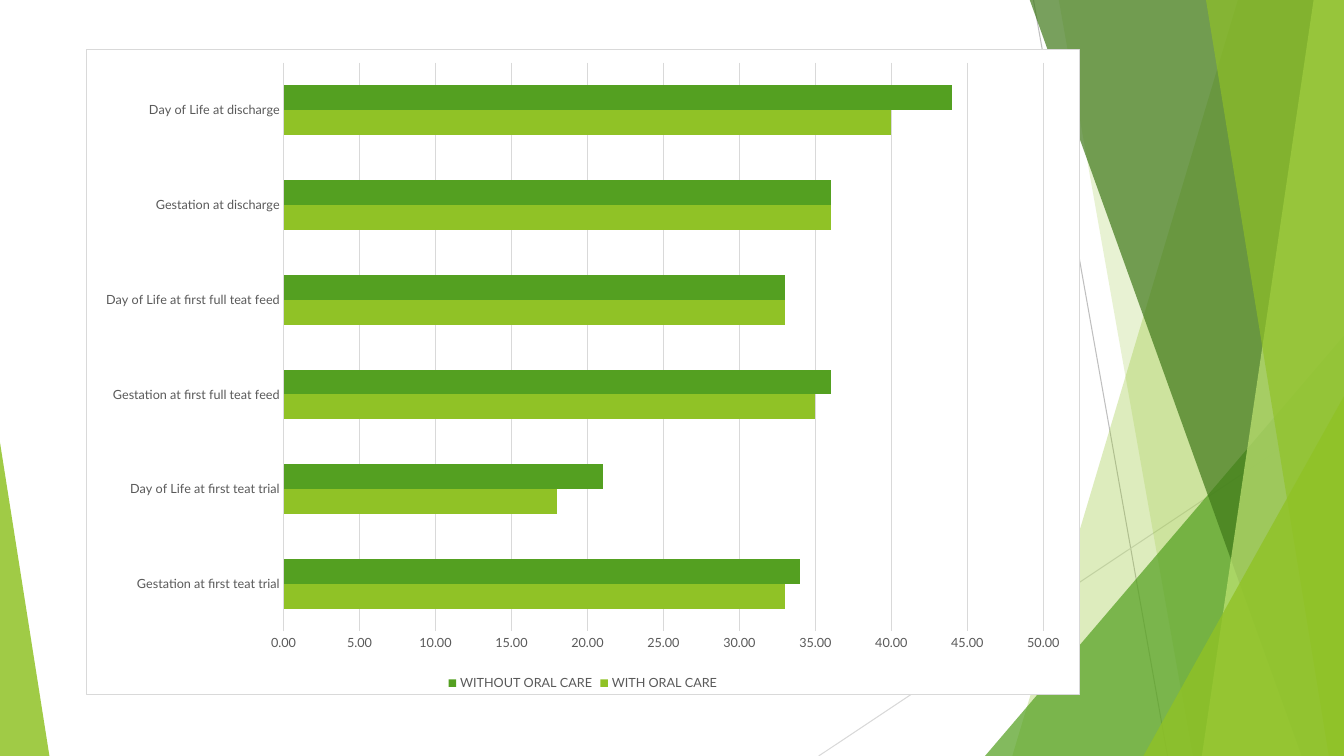
from dataclasses import dataclass

from lxml import etree
from pptx import Presentation
from pptx.chart.data import CategoryChartData
from pptx.dml.color import RGBColor
from pptx.enum.chart import XL_CHART_TYPE, XL_LEGEND_POSITION, XL_TICK_LABEL_POSITION, XL_TICK_MARK
from pptx.enum.shapes import MSO_CONNECTOR, MSO_SHAPE
from pptx.oxml import parse_xml
from pptx.oxml.ns import nsdecls, qn
from pptx.util import Pt

BAR = XL_CHART_TYPE.BAR_CLUSTERED
BOTTOM = XL_LEGEND_POSITION.BOTTOM
NEXT_TO_AXIS = XL_TICK_LABEL_POSITION.NEXT_TO_AXIS
NO_TICK = XL_TICK_MARK.NONE
STRAIGHT = MSO_CONNECTOR.STRAIGHT
TRIANGLE = MSO_SHAPE.ISOSCELES_TRIANGLE

PX = 9144
W, H = 1333, 750


@dataclass(frozen=True)
class Theme:
    lime: str = "90C226"
    green: str = "54A021"
    forest: str = "3F7819"
    pale: str = "C0E474"
    white: str = "FFFFFF"
    text: str = "595959"
    rule: str = "D9D9D9"
    rule_dark: str = "BFBFBF"
    font: str = "Lato"
    label_size: float = 9
    base_size: float = 10
    hairline: float = 0.75


FACETS = [
    ("band", (1228, 1004), "lime", 30),
    ("band", (1050, 1183), "lime", 20),
    ("triangle", (977, 333, 356, 417, 1), "green", 72),
    ("band", (1021, 1291), "forest", 70),
    ("band", (1303, 1192), "pale", 70),
    ("band", (1196, 1318), "lime", 65),
    ("triangle", (1134, 393, 199, 357, 1), "lime", 80),
    ("triangle", (0, 439, 49, 311, 0), "lime", 85),
]

CATEGORIES = [
    "Gestation at first teat trial",
    "Day of Life at first teat trial",
    "Gestation at first full teat feed",
    "Day of Life at first full teat feed",
    "Gestation at discharge",
    "Day of Life at discharge",
]

SERIES = [
    ("WITH ORAL CARE", "lime", [33, 18, 35, 33, 36, 40]),
    ("WITHOUT ORAL CARE", "green", [34, 21, 36, 33, 36, 44]),
]


class Deck:
    """Draws themed elements on the current slide."""

    def __init__(self, theme):
        self.theme = theme
        self.prs = Presentation()
        self.prs.slide_width, self.prs.slide_height = W * PX, H * PX
        self.s = self.prs.slides.add_slide(self.prs.slide_layouts[6])

    def color(self, name):
        return RGBColor.from_string(getattr(self.theme, name))

    def apply(self, target, values):
        for key, value in values.items():
            setattr(target, key, value)

    def stroke(self, line, color):
        line.color.rgb = self.color(color)
        line.width = Pt(self.theme.hairline)

    def type(self, font, size):
        self.apply(font, {"name": self.theme.font, "size": Pt(size)})
        font.color.rgb = self.color("text")

    def line(self, x1, y1, x2, y2, color):
        c = self.s.shapes.add_connector(STRAIGHT, x1 * PX, y1 * PX, x2 * PX, y2 * PX)
        self.stroke(c.line, color)
        etree.SubElement(c._element.spPr, qn("a:effectLst"))

    def paint(self, sp, color, opacity):
        sp.shadow.inherit = False
        sp.line.fill.background()
        sp.fill.solid()
        sp.fill.fore_color.rgb = self.color(color)
        clr = sp._element.spPr.find(".//" + qn("a:srgbClr"))
        etree.SubElement(clr, qn("a:alpha")).set("val", str(opacity * 1000))

    def band(self, top_x, bottom_x):
        fb = self.s.shapes.build_freeform(top_x, -1, scale=PX)
        fb.add_line_segments([(W, -1), (W, H), (bottom_x, H)], close=True)
        return fb.convert_to_shape()

    def triangle(self, x, y, w, h, apex):
        sp = self.s.shapes.add_shape(TRIANGLE, x * PX, y * PX, w * PX, h * PX)
        sp.adjustments[0] = apex
        return sp

    def facet(self, kind, place, color, opacity):
        draw = {"band": self.band, "triangle": self.triangle}[kind]
        self.paint(draw(*place), color, opacity)

    def frame(self, chart):
        t = self.theme
        sp_pr = parse_xml(
            f'<c:spPr {nsdecls("c", "a")}>'
            f'<a:solidFill><a:srgbClr val="{t.white}"/></a:solidFill>'
            f'<a:ln w="{Pt(t.hairline)}"><a:solidFill><a:srgbClr val="{t.rule}"/></a:solidFill></a:ln>'
            '</c:spPr>'
        )
        chart._chartSpace.find(qn("c:chart")).addnext(sp_pr)

    def bar_chart(self, x, y, w, h, categories, series):
        data = CategoryChartData(number_format="0.00")
        data.categories = categories
        for name, _, values in series:
            data.add_series(name, values)
        chart = self.s.shapes.add_chart(BAR, x * PX, y * PX, w * PX, h * PX, data).chart
        self.apply(chart, {"has_title": False, "has_legend": True})
        self.type(chart.font, self.theme.base_size)
        self.frame(chart)
        self.apply(chart.legend, {"position": BOTTOM, "include_in_layout": False})
        self.type(chart.legend.font, self.theme.label_size)

        plot = chart.plots[0]
        self.apply(plot, {"gap_width": 182, "vary_by_categories": False})
        for ser, (_, color, _) in zip(plot.series, series):
            ser.invert_if_negative = False
            ser.format.fill.solid()
            ser.format.fill.fore_color.rgb = self.color(color)

        cat, val = chart.category_axis, chart.value_axis
        for axis in (cat, val):
            self.apply(axis, {"major_tick_mark": NO_TICK, "minor_tick_mark": NO_TICK,
                              "tick_label_position": NEXT_TO_AXIS})
            self.type(axis.tick_labels.font, self.theme.label_size)
        self.stroke(cat.format.line, "rule")
        self.apply(val, {"minimum_scale": 0, "maximum_scale": 50, "major_unit": 5,
                         "has_major_gridlines": True})
        self.apply(val.tick_labels, {"number_format": "0.00", "number_format_is_linked": False})
        val.format.line.fill.background()
        self.stroke(val.major_gridlines.format.line, "rule")


def main():
    deck = Deck(Theme())
    deck.line(1025, 0, 1158, H, "rule_dark")
    deck.line(W, 403, 812, H, "rule")
    for facet in FACETS:
        deck.facet(*facet)
    deck.bar_chart(85, 49, 986, 641, CATEGORIES, SERIES)
    deck.prs.save("out.pptx")


if __name__ == "__main__":
    main()
